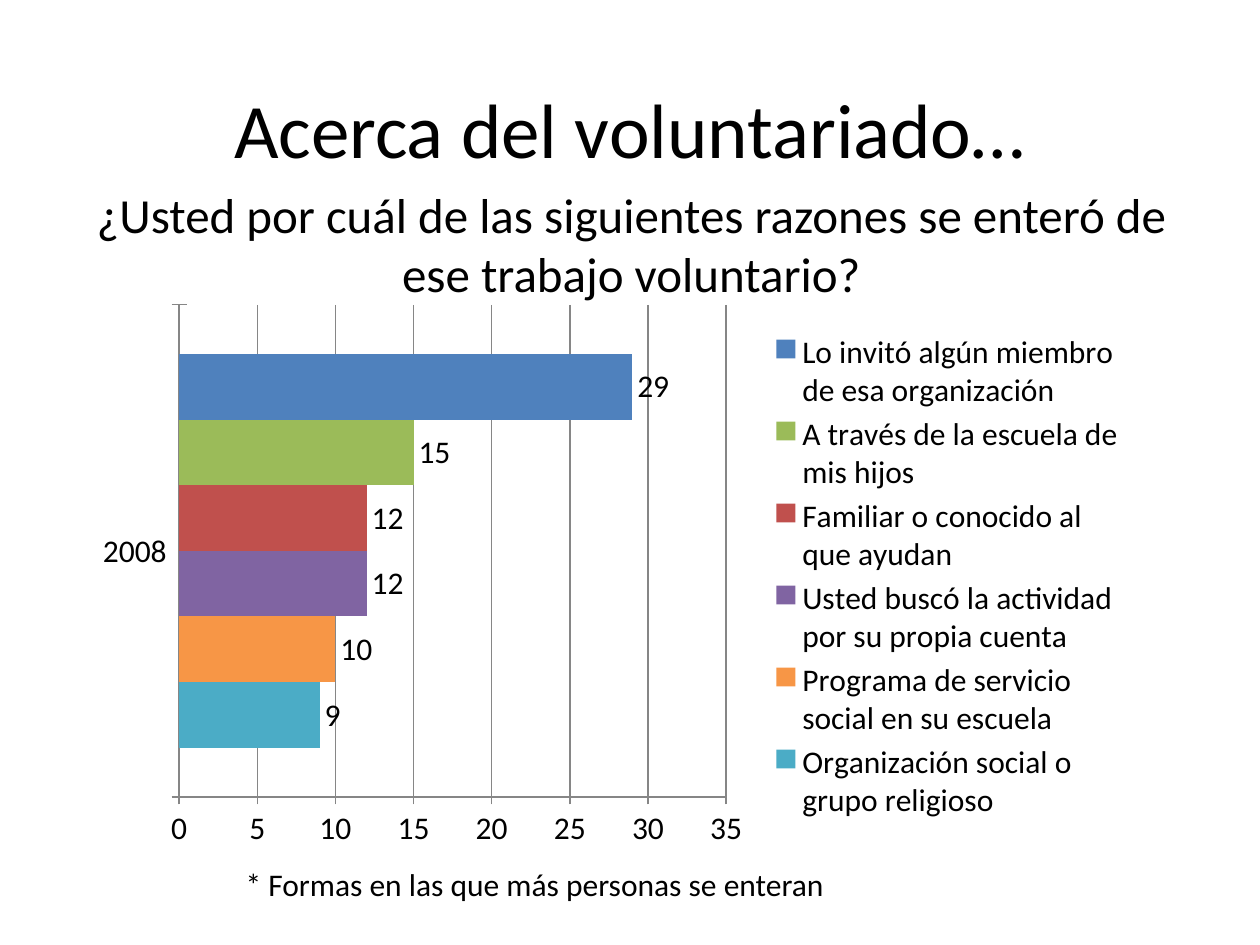
from pptx import Presentation
from pptx.chart.data import CategoryChartData
from pptx.dml.color import RGBColor
from pptx.enum.chart import (XL_CHART_TYPE, XL_LABEL_POSITION,
                             XL_LEGEND_POSITION, XL_TICK_MARK)
from pptx.enum.text import MSO_ANCHOR, PP_ALIGN
from pptx.oxml import parse_xml
from pptx.oxml.ns import nsdecls
from pptx.util import Inches, Pt

BAR = XL_CHART_TYPE.BAR_CLUSTERED
OUT_END = XL_LABEL_POSITION.OUTSIDE_END
RIGHT = XL_LEGEND_POSITION.RIGHT
CROSS = XL_TICK_MARK.CROSS
MID, TOP = MSO_ANCHOR.MIDDLE, MSO_ANCHOR.TOP
CENTER, LEFT = PP_ALIGN.CENTER, PP_ALIGN.LEFT

FONT = "Calibri"
WIDTH, HEIGHT = 10, 7.5
HEX = {"ink": "000000", "grid": "868686", "aqua": "4BACC6",
       "orange": "F79646", "purple": "8064A2", "red": "C0504D",
       "green": "9BBB59", "blue": "4F81BD"}

# Series from the bottom bar to the top one
REASONS = [
    ("Organización social o grupo religioso", 9, "aqua"),
    ("Programa de servicio social en su escuela", 10, "orange"),
    ("Usted buscó la actividad por su propia cuenta", 12, "purple"),
    ("Familiar o conocido al que ayudan", 12, "red"),
    ("A través de la escuela de mis hijos", 15, "green"),
    ("Lo invitó algún miembro de esa organización", 29, "blue"),
]

# Boxes as left, top, width, height in inches
HEAD = (0.75, 0.21, 8.5, 1.61)
ASK = (0.51, 1.31, 9, 1.25)
GRAPH = (0.67, 2.33, 8.35, 4.49)
NOTE = (1.85, 6.82, 5.71, 0.4)


def color(name):
    return RGBColor.from_string(HEX[name])


def style(font, size):
    font.name = FONT
    font.size = Pt(size)
    font.color.rgb = color("ink")


def write(shape, box, text, size, align, anchor):
    shape.left, shape.top, shape.width, shape.height = map(Inches, box)
    frame = shape.text_frame
    frame.word_wrap = True
    frame.vertical_anchor = anchor
    para = frame.paragraphs[0]
    para.alignment = align
    run = para.add_run()
    run.text = text
    style(run.font, size)


def add_text(slide, box, *args):
    write(slide.shapes.add_textbox(*map(Inches, box)), box, *args)


def layout(x, y, w, h, inner=False):
    """Manual chart layout, in shares of the chart's size."""
    target = '<c:layoutTarget val="inner"/>' if inner else ""
    return parse_xml(
        f'<c:layout {nsdecls("c")}><c:manualLayout>{target}'
        '<c:xMode val="edge"/><c:yMode val="edge"/>'
        f'<c:x val="{x}"/><c:y val="{y}"/><c:w val="{w}"/><c:h val="{h}"/>'
        '</c:manualLayout></c:layout>')


def add_graph(slide, box):
    data = CategoryChartData(number_format="0")
    data.categories = ["2008"]
    for name, value, _ in REASONS:
        data.add_series(name, [value])
    chart = slide.shapes.add_chart(BAR, *map(Inches, box), data).chart
    chart.has_title = False
    style(chart.font, 18)

    # Bars and their values
    plot = chart.plots[0]
    plot.gap_width = 150
    plot.vary_by_categories = False
    for series, (_, _, tint) in zip(plot.series, REASONS):
        series.format.fill.solid()
        series.format.fill.fore_color.rgb = color(tint)
        labels = series.data_labels
        labels.show_value = True
        labels.number_format = "0"
        labels.number_format_is_linked = False
        labels.position = OUT_END

    # Axes
    scale = chart.value_axis
    scale.minimum_scale, scale.maximum_scale, scale.major_unit = 0, 35, 5
    scale.has_major_gridlines = True
    scale.tick_labels.number_format = "0"
    scale.tick_labels.number_format_is_linked = False
    for axis in (chart.category_axis, scale):
        axis.major_tick_mark = CROSS
        axis.format.line.color.rgb = color("grid")
    scale.major_gridlines.format.line.color.rgb = color("grid")

    # Legend and plot placement
    chart.has_legend = True
    legend = chart.legend
    legend.position = RIGHT
    legend.include_in_layout = False
    for old in legend._element.findall("{*}layout"):
        legend._element.remove(old)
    legend._element.find("{*}legendPos").addnext(
        layout(0.65, 0.06, 0.34, 0.88))
    area = chart._chartSpace.find(".//{*}plotArea")
    for old in area.findall("{*}layout"):
        area.remove(old)
    area.insert(0, layout(0.09, 0.02, 0.52, 0.87, inner=True))


def main():
    deck = Presentation()
    deck.slide_width, deck.slide_height = Inches(WIDTH), Inches(HEIGHT)
    slide = deck.slides.add_slide(deck.slide_layouts[5])
    write(slide.shapes.title, ASK,
          "¿Usted por cuál de las siguientes razones se enteró de ese "
          "trabajo voluntario?", 28, CENTER, MID)
    add_graph(slide, GRAPH)
    add_text(slide, NOTE, "* Formas en las que más personas se enteran",
             18, LEFT, TOP)
    add_text(slide, HEAD, "Acerca del voluntariado…", 44, CENTER, MID)
    deck.save("out.pptx")


if __name__ == "__main__":
    main()
